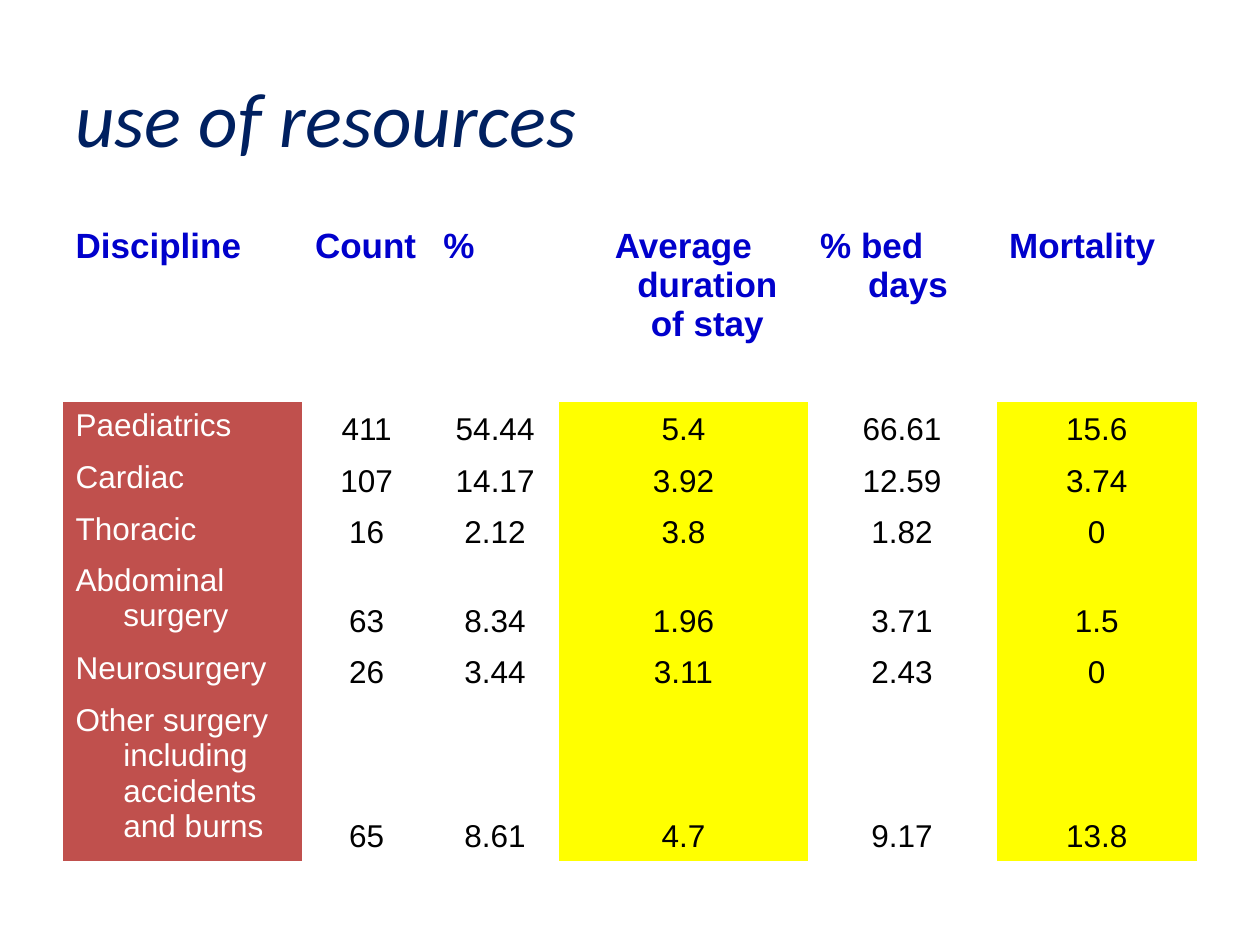
from typing import NamedTuple

import pptx
import pptx.dml.color
import pptx.enum.text
import pptx.util
from pptx.oxml.ns import qn

Inches = pptx.util.Inches
Align = pptx.enum.text.PP_ALIGN
Anchor = pptx.enum.text.MSO_ANCHOR

NO_STYLE_NO_GRID = "{2D5ABB26-0587-4C30-8999-92F81FD0307C}"
HANGING = 0.38


class Column(NamedTuple):
    heading: str
    width: float
    fill: str | None = None
    heading_align: Align = Align.LEFT


class TextStyle(NamedTuple):
    size: int
    color: str
    font: str = "Arial"
    bold: bool = False
    italic: bool = False


TITLE = TextStyle(44, "002060", font="Calibri", italic=True)
HEADING = TextStyle(20, "0000CC", bold=True)
DISCIPLINE = TextStyle(18, "FFFFFF")
FIGURE = TextStyle(18, "000000")

COLUMNS = [
    Column("Discipline", 1.9, "C0504D"),
    Column("Count", 1.02),
    Column("%", 1.02),
    Column("Average duration of stay", 1.97, "FFFF00", Align.CENTER),
    Column("% bed days", 1.5),
    Column("Mortality", 1.59, "FFFF00"),
]
ROWS = [
    ("Paediatrics", "411", "54.44", "5.4", "66.61", "15.6"),
    ("Cardiac", "107", "14.17", "3.92", "12.59", "3.74"),
    ("Thoracic", "16", "2.12", "3.8", "1.82", "0"),
    ("Abdominal surgery", "63", "8.34", "1.96", "3.71", "1.5"),
    ("Neurosurgery", "26", "3.44", "3.11", "2.43", "0"),
    ("Other surgery including accidents and burns",
     "65", "8.61", "4.7", "9.17", "13.8"),
]
ROW_HEIGHTS = [1.44, 0.41, 0.41, 0.41, 0.67, 0.41, 1.18]


def rgb(color: str) -> pptx.dml.color.RGBColor:
    return pptx.dml.color.RGBColor.from_string(color)


def write(frame, text: str, style: TextStyle, align: Align = Align.LEFT):
    """Put one formatted paragraph in the text frame and return it."""
    frame.text = text
    para = frame.paragraphs[0]
    para.alignment = align
    font = para.runs[0].font
    font.name = style.font
    font.size = pptx.util.Pt(style.size)
    font.bold = style.bold
    font.italic = style.italic
    font.color.rgb = rgb(style.color)
    return para


def fill_cell(cell, text: str, style: TextStyle, align: Align,
              anchor: Anchor, fill: str | None) -> None:
    para = write(cell.text_frame, text, style, align)
    properties = para._p.get_or_add_pPr()
    properties.set("marL", str(Inches(HANGING)))
    properties.set("indent", str(-Inches(HANGING)))
    cell.vertical_anchor = anchor
    if fill:
        cell.fill.solid()
        cell.fill.fore_color.rgb = rgb(fill)
    else:
        cell.fill.background()


def add_title(page) -> None:
    box = page.shapes.add_textbox(Inches(0.5), Inches(0.3), Inches(9), Inches(1.25))
    box.text_frame.word_wrap = True
    box.text_frame.vertical_anchor = Anchor.MIDDLE
    write(box.text_frame, "use of resources", TITLE)


def add_resource_table(page) -> None:
    table = page.shapes.add_table(
        len(ROW_HEIGHTS), len(COLUMNS),
        Inches(0.5), Inches(1.75), Inches(9), Inches(sum(ROW_HEIGHTS)),
    ).table
    table.first_row = False
    table.horz_banding = False
    table._tbl.tblPr.find(qn("a:tableStyleId")).text = NO_STYLE_NO_GRID

    for row, height in zip(table.rows, ROW_HEIGHTS):
        row.height = Inches(height)
    for index, column in enumerate(COLUMNS):
        table.columns[index].width = Inches(column.width)
        fill_cell(table.cell(0, index), column.heading, HEADING,
                  column.heading_align, Anchor.TOP, None)
        if index == 0:
            look = DISCIPLINE, Align.LEFT, Anchor.TOP
        else:
            look = FIGURE, Align.CENTER, Anchor.BOTTOM
        for number, values in enumerate(ROWS, start=1):
            fill_cell(table.cell(number, index), values[index], *look, column.fill)


def main() -> None:
    deck = pptx.Presentation()
    deck.slide_width, deck.slide_height = Inches(10), Inches(7.5)
    page = deck.slides.add_slide(deck.slide_layouts[6])
    add_title(page)
    add_resource_table(page)
    deck.save("out.pptx")


if __name__ == "__main__":
    main()
